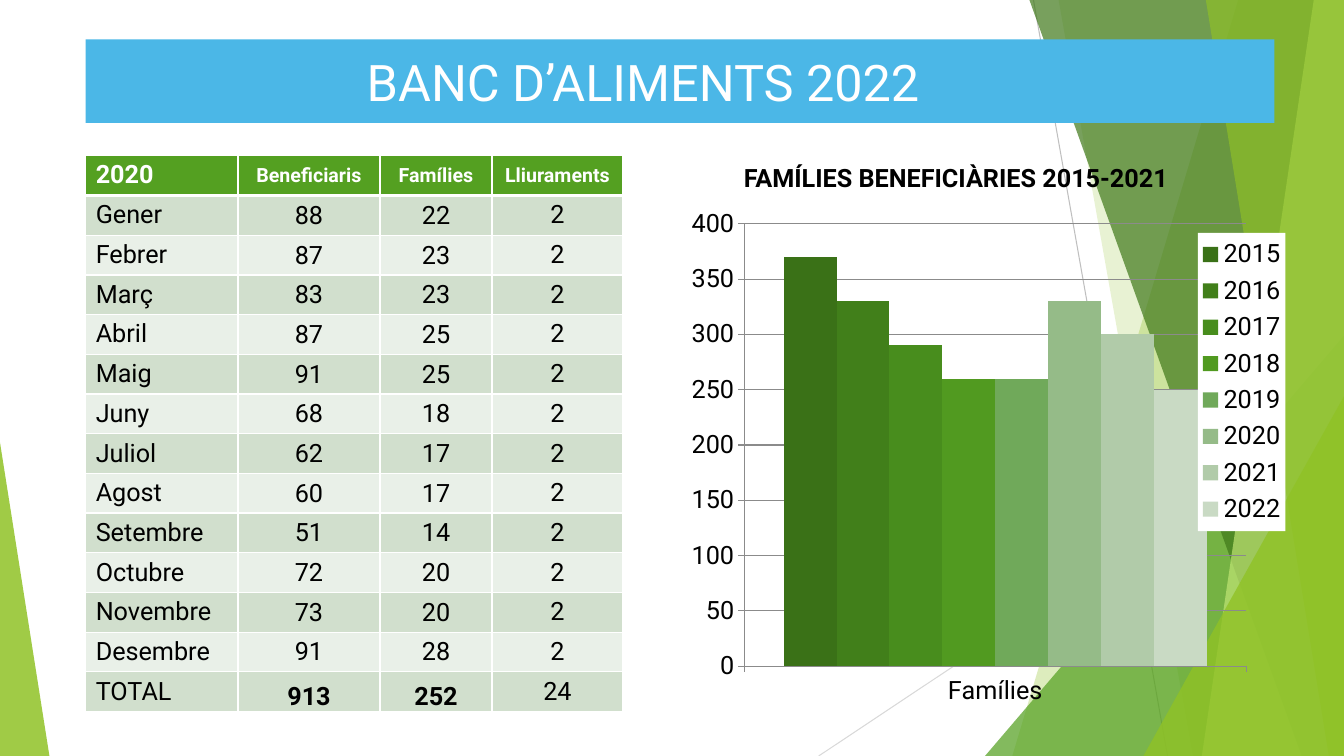
from pptx import Presentation
from pptx.chart.data import CategoryChartData
from pptx.dml.color import RGBColor
from pptx.enum.chart import XL_CHART_TYPE, XL_LEGEND_POSITION, XL_TICK_MARK
from pptx.enum.shapes import MSO_CONNECTOR, MSO_SHAPE
from pptx.enum.text import MSO_ANCHOR, PP_ALIGN
from pptx.oxml import parse_xml
from pptx.oxml.ns import nsdecls, qn
from pptx.util import Inches, Pt

WHITE = RGBColor(0xFF, 0xFF, 0xFF)
BLACK = RGBColor(0, 0, 0)
SKY = RGBColor(0x4B, 0xB7, 0xE7)
LIME = RGBColor(0x90, 0xC2, 0x26)
GREEN = RGBColor(0x54, 0xA0, 0x21)
FOREST = RGBColor(0x3F, 0x78, 0x19)
PALE = RGBColor(0xC0, 0xE4, 0x74)
BAND = RGBColor(0xD1, 0xDF, 0xCD)
LIGHT = RGBColor(0xE9, 0xF0, 0xE8)
SILVER = RGBColor(0xBF, 0xBF, 0xBF)
MIST = RGBColor(0xD9, 0xD9, 0xD9)
GRID = RGBColor(0x8B, 0x8B, 0x8B)
FONT = "Roboto"
WIDE, HIGH = 13.33, 7.5

RAYS = [(10.25, 0, 11.58, HIGH, SILVER), (WIDE, 4.03, 8.12, HIGH, MIST)]
# Top and bottom x of each band's left edge, colour, opacity
BANDS = [
    (12.28, 10.04, LIME, 30),
    (10.5, 11.83, LIME, 20),
    (10.21, 12.91, FOREST, 70),
    (13.03, 11.92, PALE, 70),
    (11.96, 13.18, LIME, 65),
]
# Left, top, width, apex, colour, opacity
PEAKS = {
    "low": (9.77, 3.33, 3.56, 1, GREEN, 72),
    "right": (11.34, 3.93, 1.99, 1, LIME, 80),
    "left": (0, 4.39, 0.49, 0, LIME, 85),
}
HEADS = ["2020", "Beneficiaris", "Famílies", "Lliuraments"]
MONTHS = [
    ("Gener", 88, 22), ("Febrer", 87, 23), ("Març", 83, 23),
    ("Abril", 87, 25), ("Maig", 91, 25), ("Juny", 68, 18),
    ("Juliol", 62, 17), ("Agost", 60, 17), ("Setembre", 51, 14),
    ("Octubre", 72, 20), ("Novembre", 73, 20), ("Desembre", 91, 28),
]
TOTAL = ("TOTAL", 913, 252, 24)
COLS = [1.51, 1.41, 1.11, 1.3]
TOP, ROW = 0.4, 0.39
CHART_W, CHART_H = 6.29, 5.05
YEARS = [
    ("2015", 370, RGBColor(0x3A, 0x71, 0x17)),
    ("2016", 330, RGBColor(0x41, 0x7F, 0x1A)),
    ("2017", 290, RGBColor(0x48, 0x8D, 0x1D)),
    ("2018", 260, RGBColor(0x51, 0x9A, 0x20)),
    ("2019", 260, RGBColor(0x70, 0xA9, 0x5A)),
    ("2020", 330, RGBColor(0x95, 0xBB, 0x88)),
    ("2021", 300, RGBColor(0xB1, 0xCB, 0xA9)),
    ("2022", 250, RGBColor(0xC9, 0xDA, 0xC4)),
]


def style(item, **values):
    for name, value in values.items():
        setattr(item, name, value)


def write(frame, text, size, color, bold=False, align=PP_ALIGN.LEFT):
    para = frame.paragraphs[0]
    para.alignment = align
    run = para.add_run()
    run.text = text
    style(run.font, name=FONT, size=Pt(size), bold=bold)
    run.font.color.rgb = color


def paint(shape, color, alpha=100):
    """Give a flat fill with no line or shadow; alpha is opacity in percent."""
    shape.shadow.inherit = False
    shape.fill.solid()
    shape.fill.fore_color.rgb = color
    shape.line.fill.background()
    if alpha < 100:
        tone = shape.element.spPr.find(qn("a:solidFill"))[0]
        tone.append(parse_xml(f'<a:alpha {nsdecls("a")} val="{alpha * 1000}"/>'))


def add_ray(shapes, x1, y1, x2, y2, color):
    ends = [Inches(v) for v in (x1, y1, x2, y2)]
    ray = shapes.add_connector(MSO_CONNECTOR.STRAIGHT, *ends)
    ray.line.width = Pt(0.75)
    ray.line.color.rgb = color
    ray.element.spPr.append(parse_xml(f'<a:effectLst {nsdecls("a")}/>'))


def add_band(shapes, top, foot, color, alpha):
    """Fill from a slanted left edge to the right side of the slide."""
    pen = shapes.build_freeform(Inches(top), 0)
    rest = [(WIDE, 0), (WIDE, HIGH), (foot, HIGH)]
    pen.add_line_segments([(Inches(x), Inches(y)) for x, y in rest])
    paint(pen.convert_to_shape(), color, alpha)


def add_peak(shapes, left, top, width, apex, color, alpha):
    """Add a triangle that stands on the bottom edge of the slide."""
    peak = shapes.add_shape(MSO_SHAPE.ISOSCELES_TRIANGLE, Inches(left),
                            Inches(top), Inches(width), Inches(HIGH - top))
    peak.adjustments[0] = apex
    paint(peak, color, alpha)


def add_decor(shapes):
    for ray in RAYS:
        add_ray(shapes, *ray)
    for band in BANDS[:2]:
        add_band(shapes, *band)
    add_peak(shapes, *PEAKS["low"])
    for band in BANDS[2:]:
        add_band(shapes, *band)
    add_peak(shapes, *PEAKS["right"])
    add_peak(shapes, *PEAKS["left"])


def add_banner(shapes, text):
    box = shapes.add_shape(MSO_SHAPE.RECTANGLE, Inches(0.85), Inches(0.39),
                           Inches(11.79), Inches(0.83))
    paint(box, SKY)
    style(box.text_frame, margin_right=Inches(0.83), word_wrap=True,
          vertical_anchor=MSO_ANCHOR.MIDDLE)
    write(box.text_frame, text, 36, WHITE, align=PP_ALIGN.CENTER)


def add_edges(cell, head):
    """Draw white cell borders, heavier beneath the heading row."""
    for side in "LRTB":
        width = Pt(3 if head and side == "B" else 1)
        cell._tc.get_or_add_tcPr().append(parse_xml(
            f'<a:ln{side} {nsdecls("a")} w="{width}"><a:solidFill>'
            f'<a:srgbClr val="{WHITE}"/></a:solidFill></a:ln{side}>'))


def fill_cell(cell, row, col, value, last):
    head = row == 0
    add_edges(cell, head)
    cell.fill.solid()
    cell.fill.fore_color.rgb = GREEN if head else BAND if row % 2 else LIGHT
    count = not head and col in (1, 2)
    if head or count:
        cell.vertical_anchor = MSO_ANCHOR.MIDDLE
    if count:
        thin = Inches(0.01)
        style(cell, margin_left=thin, margin_right=thin, margin_top=thin,
              margin_bottom=0)
        if last:
            cell.vertical_anchor = MSO_ANCHOR.BOTTOM
    write(cell.text_frame, str(value), 14 if head and col else 18,
          WHITE if head else BLACK, head or (last and count),
          PP_ALIGN.CENTER if col else PP_ALIGN.LEFT)


def add_grid(shapes):
    rows = [HEADS, *[(*month, 2) for month in MONTHS], TOTAL]
    high = TOP + ROW * (len(rows) - 1)
    table = shapes.add_table(len(rows), len(COLS), Inches(0.85), Inches(1.54),
                             Inches(sum(COLS)), Inches(high)).table
    for col, width in zip(table.columns, COLS):
        col.width = Inches(width)
    for r, row in enumerate(rows):
        table.rows[r].height = Inches(ROW if r else TOP)
        for c, value in enumerate(row):
            fill_cell(table.cell(r, c), r, c, value, row is TOTAL)


def add_label(shapes, text):
    box = shapes.add_textbox(Inches(7.28), Inches(1.56), Inches(5.07), Inches(0.4))
    box.text_frame.word_wrap = True
    write(box.text_frame, text, 18, BLACK, True)


def make_layout(x, y, w, h, inner=False):
    """Turn inches within the chart into a layout in shares of its size."""
    target = '<c:layoutTarget val="inner"/>' if inner else ""
    return parse_xml(
        f'<c:layout {nsdecls("c")}><c:manualLayout>{target}'
        '<c:xMode val="edge"/><c:yMode val="edge"/>'
        f'<c:x val="{x / CHART_W}"/><c:y val="{y / CHART_H}"/>'
        f'<c:w val="{w / CHART_W}"/><c:h val="{h / CHART_H}"/>'
        '</c:manualLayout></c:layout>')


def place_parts(chart):
    """Fix the plot and legend positions and back the legend in white."""
    root = chart._chartSpace.find(qn("c:chart"))
    plot, legend = root.find(qn("c:plotArea")), root.find(qn("c:legend"))
    for part in (plot, legend):
        for old in part.findall(qn("c:layout")):
            part.remove(old)
    plot.insert(0, make_layout(0.84, 0.25, 4.98, 4.39, True))
    legend.find(qn("c:legendPos")).addnext(make_layout(5.34, 0.34, 0.87, 2.96))
    legend.find(qn("c:overlay")).addnext(parse_xml(
        f'<c:spPr {nsdecls("c", "a")}><a:solidFill><a:srgbClr val="{WHITE}"/>'
        '</a:solidFill></c:spPr>'))


def add_bars(shapes):
    data = CategoryChartData()
    data.categories = ["Famílies"]
    for year, count, _ in YEARS:
        data.add_series(year, [count])
    chart = shapes.add_chart(XL_CHART_TYPE.COLUMN_CLUSTERED, Inches(6.54), Inches(1.97),
                             Inches(CHART_W), Inches(CHART_H), data).chart
    style(chart, has_title=False, has_legend=True)
    style(chart.font, name=FONT, size=Pt(18))
    chart.font.color.rgb = BLACK
    style(chart.legend, position=XL_LEGEND_POSITION.RIGHT, include_in_layout=True)
    style(chart.plots[0], gap_width=150, overlap=0, vary_by_categories=False)
    for series, (_, _, color) in zip(chart.plots[0].series, YEARS):
        series.format.fill.solid()
        series.format.fill.fore_color.rgb = color
    style(chart.value_axis, minimum_scale=0, maximum_scale=400, major_unit=50,
          has_major_gridlines=True)
    for axis in (chart.category_axis, chart.value_axis):
        axis.major_tick_mark = XL_TICK_MARK.OUTSIDE
        axis.format.line.color.rgb = GRID
    chart.value_axis.major_gridlines.format.line.color.rgb = GRID
    place_parts(chart)


def main():
    deck = Presentation()
    style(deck, slide_width=Inches(WIDE), slide_height=Inches(HIGH))
    shapes = deck.slides.add_slide(deck.slide_layouts[6]).shapes
    add_decor(shapes)
    add_banner(shapes, "BANC D’ALIMENTS 2022")
    add_grid(shapes)
    add_label(shapes, "FAMÍLIES BENEFICIÀRIES 2015-2021")
    add_bars(shapes)
    deck.save("out.pptx")


if __name__ == "__main__":
    main()
